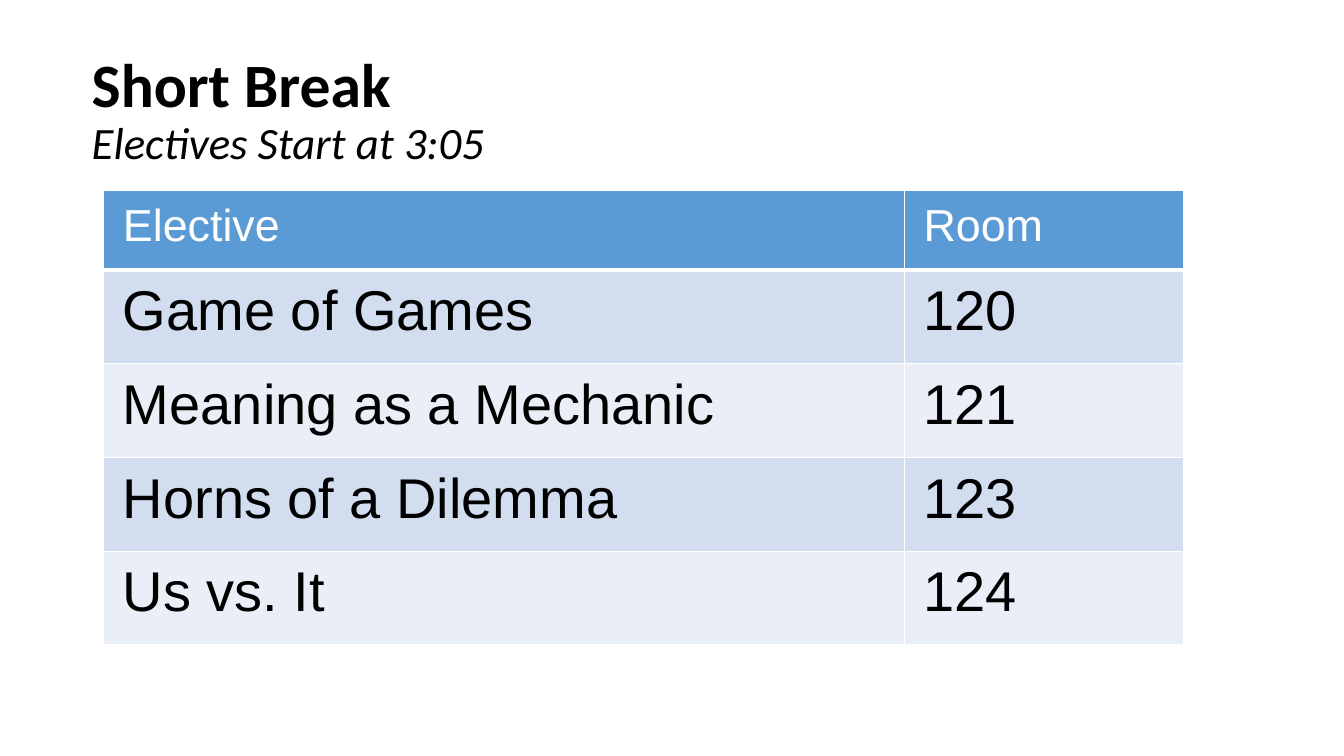
from lxml.etree import SubElement
from pptx import Presentation
from pptx.dml.color import RGBColor
from pptx.enum.text import MSO_ANCHOR
from pptx.oxml.ns import qn
from pptx.util import Inches, Pt

TITLE = "Short Break"
START = "Electives Start at 3:05"
ROWS = [
    ("Elective", "Room"),
    ("Game of Games", "120"),
    ("Meaning as a Mechanic", "121"),
    ("Horns of a Dilemma", "123"),
    ("Us vs. It", "124"),
]
WIDTHS = (7.94, 2.77)
HEAD_H, ROW_H = 0.79, 0.93

BLACK = RGBColor(0x00, 0x00, 0x00)
WHITE = RGBColor(0xFF, 0xFF, 0xFF)
BLUE = RGBColor(0x5B, 0x9B, 0xD5)
BANDS = (RGBColor(0xD2, 0xDE, 0xEF), RGBColor(0xEA, 0xEF, 0xF7))


def add_run(para, text, font, size, color, bold=False, italic=False):
    run = para.add_run()
    run.text = text
    run.font.name = font
    run.font.size = Pt(size)
    run.font.color.rgb = color
    run.font.bold = bold
    run.font.italic = italic


def set_insets(box, side, top):
    box.margin_left = box.margin_right = Inches(side)
    box.margin_top = box.margin_bottom = Inches(top)


def add_edges(cell, head):
    """Draw white borders; call before the fill, which must follow them."""
    props = cell._tc.get_or_add_tcPr()
    for side in "LRTB":
        width = Pt(3 if head and side == "B" else 1)
        line = SubElement(props, qn(f"a:ln{side}"), w=str(width))
        fill = SubElement(line, qn("a:solidFill"))
        SubElement(fill, qn("a:srgbClr"), val=str(WHITE))


def add_title(slide):
    box = slide.shapes.add_textbox(
        Inches(0.78), Inches(0.47), Inches(11.77), Inches(1.14))
    frame = box.text_frame
    frame.word_wrap = True
    frame.vertical_anchor = MSO_ANCHOR.TOP
    set_insets(frame, 0.13, 0.07)
    para = frame.paragraphs[0]
    para.line_spacing = 0.9
    add_run(para, TITLE, "Calibri", 44, BLACK, bold=True)
    para.add_line_break()
    add_run(para, START, "Calibri", 32, BLACK, italic=True)


def add_rooms(slide):
    heights = [HEAD_H] + [ROW_H] * (len(ROWS) - 1)
    table = slide.shapes.add_table(
        len(ROWS), len(WIDTHS), Inches(1.03), Inches(1.89),
        Inches(sum(WIDTHS)), Inches(sum(heights))).table
    for col, width in zip(table.columns, WIDTHS):
        col.width = Inches(width)
    for r, (texts, height) in enumerate(zip(ROWS, heights)):
        table.rows[r].height = Inches(height)
        head = r == 0
        for c, text in enumerate(texts):
            cell = table.cell(r, c)
            set_insets(cell, 0.19, 0.1)
            add_edges(cell, head)
            cell.fill.solid()
            cell.fill.fore_color.rgb = BLUE if head else BANDS[(r - 1) % 2]
            add_run(cell.text_frame.paragraphs[0], text, "Arial",
                    32 if head else 40, WHITE if head else BLACK)


def main():
    deck = Presentation()
    deck.slide_width, deck.slide_height = Inches(13.33), Inches(7.5)
    slide = deck.slides.add_slide(deck.slide_layouts[6])
    add_title(slide)
    add_rooms(slide)
    deck.save("out.pptx")


if __name__ == "__main__":
    main()
